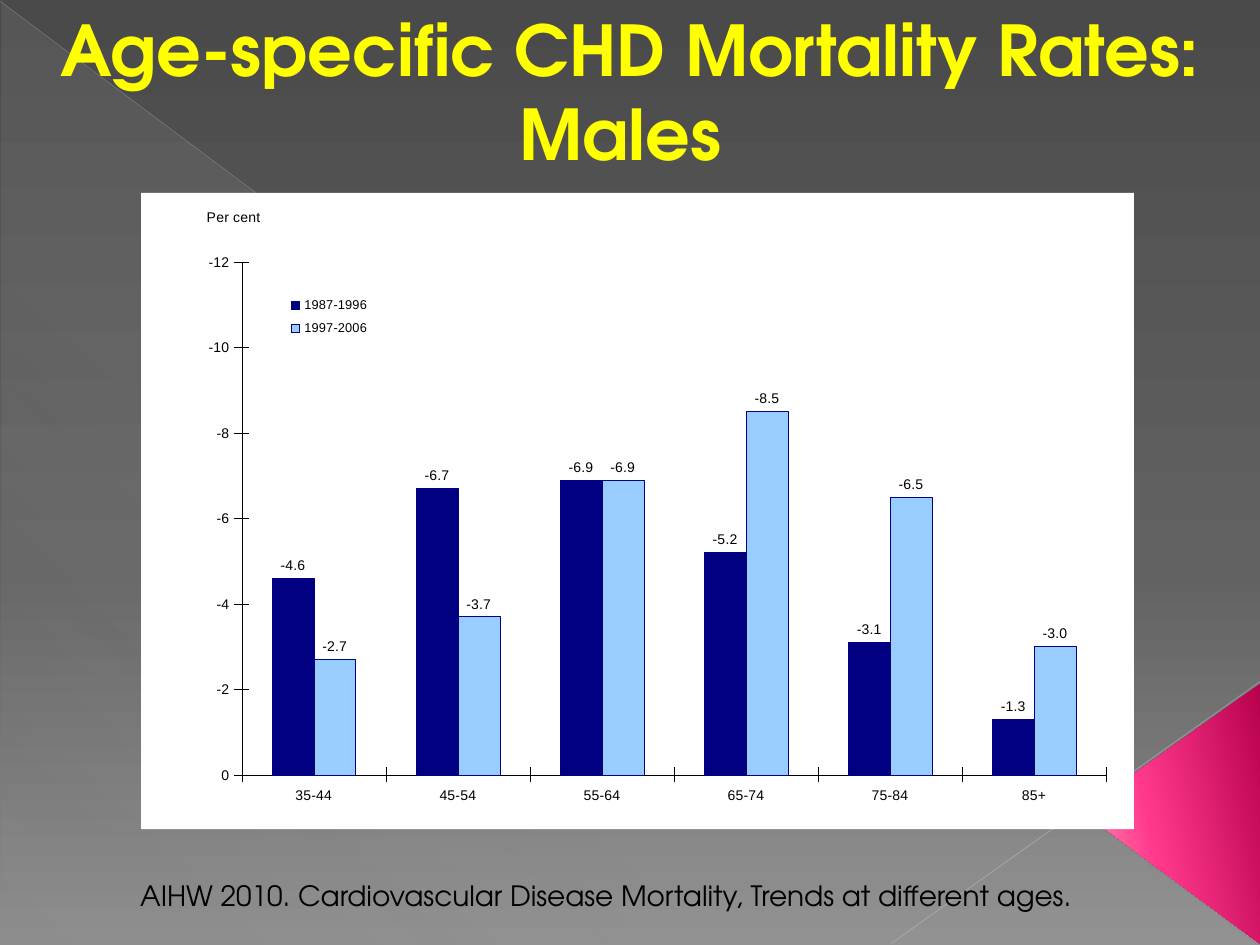
from lxml import etree
from pptx import Presentation
from pptx.chart.data import CategoryChartData
from pptx.dml.color import RGBColor
from pptx.enum.chart import (XL_CHART_TYPE, XL_LABEL_POSITION, XL_LEGEND_POSITION,
                             XL_TICK_LABEL_POSITION, XL_TICK_MARK)
from pptx.enum.shapes import MSO_CONNECTOR, MSO_SHAPE
from pptx.enum.text import MSO_ANCHOR, MSO_AUTO_SIZE, PP_ALIGN
from pptx.oxml import parse_xml
from pptx.oxml.ns import nsdecls, qn
from pptx.util import Inches, Pt

COLORS = {
    "black": "000000", "white": "FFFFFF", "title": "FFFF00", "title_edge": "72002C",
    "navy": "000080", "sky": "99CCFF", "veil": "D2D2D2",
    "long_line": "BFBFBF", "short_line": "C6C6C6",
    "page_top": "4A4A4A", "page_middle": "626262", "page_bottom": "8C8C8C",
    "pink_dark": "B8014E", "pink": "FF388C", "pink_light": "FF9CB9",
}
HEADING_FONT = "TeX Gyre Adventor"
CHART_FONT = "Arial"
AGES = ["35-44", "45-54", "55-64", "65-74", "75-84", "85+"]
PERIODS = [
    ("1987-1996", "navy", [-4.6, -6.7, -6.9, -5.2, -3.1, -1.3]),
    ("1997-2006", "sky", [-2.7, -3.7, -6.9, -8.5, -6.5, -3.0]),
]


def color(name):
    return RGBColor.from_string(COLORS[name])


def inches(*lengths):
    return [Inches(length) for length in lengths]


def style_font(font, size, name=CHART_FONT, color_name="black", bold=False):
    font.size, font.name, font.bold = Pt(size), name, bold
    font.color.rgb = color(color_name)


def set_gradient(fill, parent, stops, angle):
    """Stops are (position, color name, opacity), all in percent."""
    fill.solid()
    marks = "".join(
        f'<a:gs pos="{place * 1000}"><a:srgbClr val="{COLORS[name]}">'
        f'<a:alpha val="{opacity * 1000}"/></a:srgbClr></a:gs>'
        for place, name, opacity in stops)
    gradient = parse_xml(
        f'<a:gradFill {nsdecls("a")} rotWithShape="1"><a:gsLst>{marks}</a:gsLst>'
        f'<a:lin ang="{angle * 60000}" scaled="0"/></a:gradFill>')
    parent.replace(parent.find(qn("a:solidFill")), gradient)


def add_gradient_shape(page, kind, box, stops, angle):
    shape = page.shapes.add_shape(kind, *inches(*box))
    shape.shadow.inherit = False
    shape.line.fill.background()
    set_gradient(shape.fill, shape._element.spPr, stops, angle)
    return shape


def add_thin_line(page, start, end, color_name, width, opacity):
    line = page.shapes.add_connector(MSO_CONNECTOR.STRAIGHT, *inches(*start, *end))
    line.line.color.rgb = color(color_name)
    line.line.width = Pt(width)
    properties = line._element.spPr
    tint = properties.find(".//" + qn("a:srgbClr"))
    etree.SubElement(tint, qn("a:alpha")).set("val", str(opacity * 1000))
    etree.SubElement(properties, qn("a:effectLst"))


def add_backdrop(page):
    background = page.background.fill
    background.solid()
    set_gradient(background, page._element.find(".//" + qn("p:bgPr")),
                 [(0, "page_top", 100), (60, "page_middle", 100),
                  (100, "page_bottom", 100)], 90)
    add_gradient_shape(page, MSO_SHAPE.RIGHT_TRIANGLE, (0.01, 0.02, 9.98, 7.48),
                       [(0, "veil", 10), (70, "veil", 8), (100, "veil", 1)], 133)
    add_thin_line(page, (0, 0.01), (9.99, 7.49), "long_line", 0.39, 35)
    add_thin_line(page, (10, 5.41), (7.07, 7.49), "short_line", 0.47, 45)
    corner = add_gradient_shape(
        page, MSO_SHAPE.ISOSCELES_TRIANGLE, (8.26, 5.75, 2.07, 1.42),
        [(0, "pink_dark", 100), (60, "pink", 100), (100, "pink_light", 100)], 258)
    corner.rotation = 270
    corner.adjustments[0] = 0.51


def chart_layout(chart_box, part_box, inner=False):
    """Manual layout for a part whose box is in inches from the chart's corner."""
    _, _, width, height = chart_box
    left, top, part_width, part_height = part_box
    values = [("xMode", "edge"), ("yMode", "edge"),
              ("x", left / width), ("y", top / height)]
    if part_width:
        values += [("w", part_width / width), ("h", part_height / height)]
    if inner:
        values.insert(0, ("layoutTarget", "inner"))
    items = "".join(f'<c:{tag} val="{value}"/>' for tag, value in values)
    return parse_xml(f'<c:layout {nsdecls("c")}><c:manualLayout>{items}'
                     f'</c:manualLayout></c:layout>')


def place_part(element, layout, index):
    for old in element.findall(qn("c:layout")):
        element.remove(old)
    element.insert(index, layout)


def white_area():
    return parse_xml(
        f'<c:spPr {nsdecls("c", "a")}><a:solidFill><a:srgbClr val="{COLORS["white"]}"/>'
        f'</a:solidFill><a:ln><a:noFill/></a:ln></c:spPr>')


def style_axis(axis):
    axis.has_major_gridlines = False
    axis.major_tick_mark = XL_TICK_MARK.CROSS
    axis.minor_tick_mark = XL_TICK_MARK.NONE
    axis.format.line.color.rgb = color("black")
    axis.format.line.width = Pt(0.25)
    style_font(axis.tick_labels.font, 8)


def add_rate_chart(page, box):
    data = CategoryChartData(number_format="0.0")
    data.categories = AGES
    for name, _, values in PERIODS:
        data.add_series(name, values)
    chart = page.shapes.add_chart(
        XL_CHART_TYPE.COLUMN_CLUSTERED, *inches(*box), data).chart
    chart.has_title = False
    style_font(chart.font, 8)

    # Columns and their labels
    plot = chart.plots[0]
    plot.gap_width, plot.overlap, plot.vary_by_categories = 145, 0, False
    for series, (_, color_name, _) in zip(plot.series, PERIODS):
        series.invert_if_negative = False
        series.format.fill.solid()
        series.format.fill.fore_color.rgb = color(color_name)
        series.format.line.color.rgb = color("navy")
        series.format.line.width = Pt(0.25)
        labels = series.data_labels
        labels.show_value = True
        labels.number_format, labels.number_format_is_linked = "0.0", False
        labels.position = XL_LABEL_POSITION.OUTSIDE_END
        style_font(labels.font, 8)

    # Axes: zero at the foot, falls growing upwards
    style_axis(chart.category_axis)
    chart.category_axis.tick_label_position = XL_TICK_LABEL_POSITION.HIGH
    rates = chart.value_axis
    style_axis(rates)
    rates.minimum_scale, rates.maximum_scale, rates.major_unit = -12, 0, 2
    rates.reverse_order = True
    rates.tick_labels.number_format = "0"
    rates.tick_labels.number_format_is_linked = False
    frame = rates.axis_title.text_frame
    span = frame.paragraphs[0].add_run()
    span.text = "Per cent"
    style_font(span.font, 8)
    frame._txBody.bodyPr.set("rot", "0")
    place_part(rates.axis_title._element, chart_layout(box, (0.5, 0.1, 0, 0)), 1)

    # Legend inside the plot
    chart.has_legend = True
    chart.legend.position = XL_LEGEND_POSITION.RIGHT
    chart.legend.include_in_layout = False
    style_font(chart.legend.font, 7.3)
    place_part(chart.legend._element, chart_layout(box, (1.12, 0.77, 0.75, 0.43)), 1)

    # Plot position and white grounds
    area = chart._chartSpace.chart.plotArea
    place_part(area, chart_layout(box, (0.8, 0.55, 6.86, 4.07), inner=True), 0)
    area.append(white_area())
    chart._chartSpace.chart.addnext(white_area())


def write_text(frame, text, align, size, color_name, bold=False):
    frame.word_wrap = True
    frame.auto_size = MSO_AUTO_SIZE.SHAPE_TO_FIT_TEXT
    frame.vertical_anchor = MSO_ANCHOR.TOP
    para = frame.paragraphs[0]
    para.alignment = align
    span = para.add_run()
    span.text = text
    style_font(span.font, size, HEADING_FONT, color_name, bold)
    return span


def add_source_note(page, box):
    note = page.shapes.add_textbox(*inches(*box))
    write_text(note.text_frame,
               "AIHW 2010. Cardiovascular Disease Mortality, Trends at different ages. ",
               PP_ALIGN.RIGHT, 16, "black")


def place_title(page, box):
    title = page.shapes.title
    title.left, title.top, title.width, title.height = inches(*box)
    span = write_text(title.text_frame, "Age-specific CHD Mortality Rates: Males ",
                      PP_ALIGN.CENTER, 40, "title", bold=True)
    span.font._element.insert(0, parse_xml(
        f'<a:ln {nsdecls("a")} w="{Pt(0.75)}"><a:solidFill>'
        f'<a:srgbClr val="{COLORS["title_edge"]}"/></a:solidFill></a:ln>'))
    page.shapes._spTree.append(title._element)  # in front of the backdrop


def main():
    deck = Presentation()
    deck.slide_width, deck.slide_height = inches(10, 7.5)
    page = deck.slides.add_slide(deck.slide_layouts[5])
    add_backdrop(page)
    add_rate_chart(page, (1.12, 1.53, 7.88, 5.05))
    add_source_note(page, (0.25, 6.92, 8.42, 0.37))
    place_title(page, (0, 0, 10, 1.45))
    deck.save("out.pptx")


if __name__ == "__main__":
    main()
